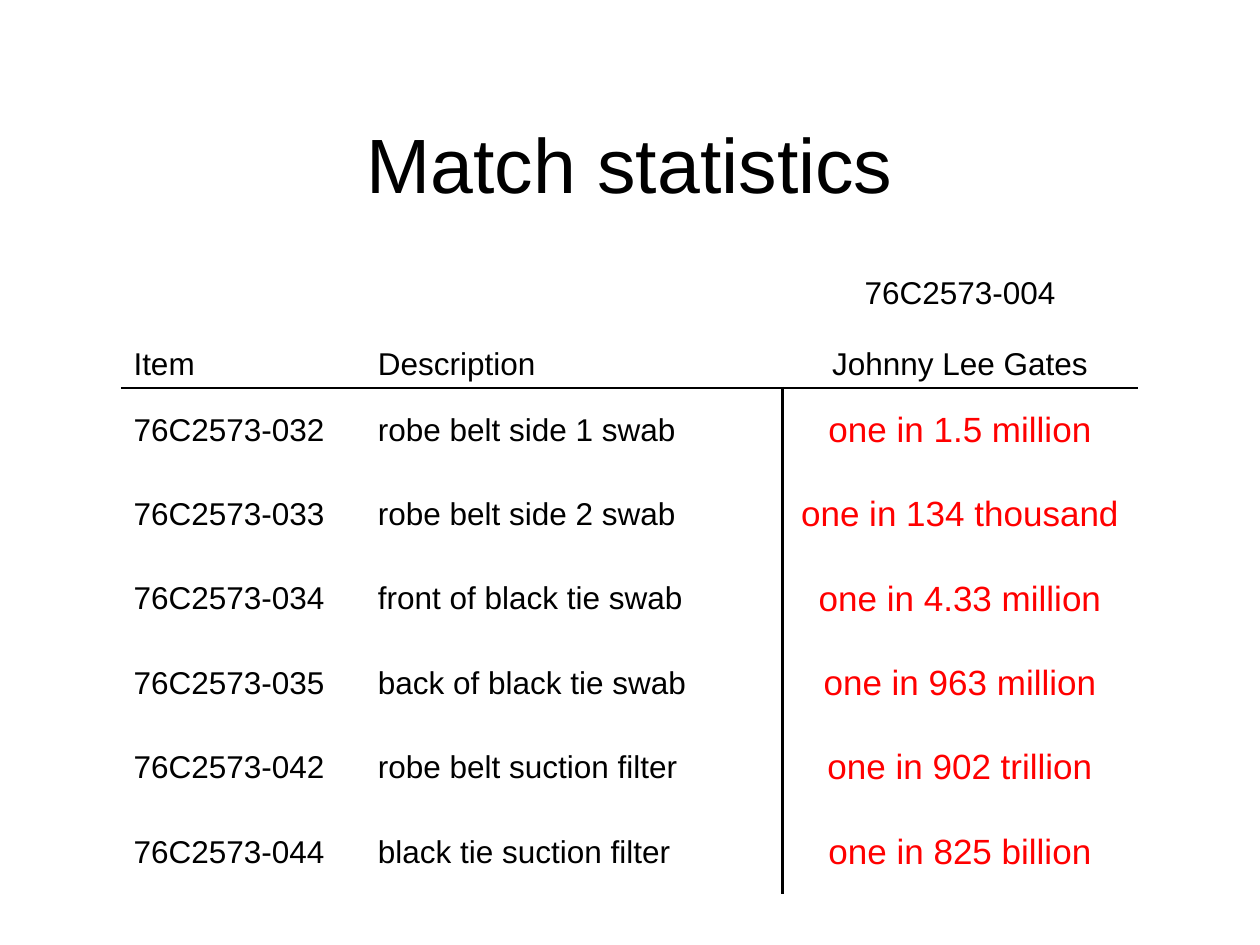
from lxml import etree
from pptx import Presentation
from pptx.dml.color import RGBColor
from pptx.enum.text import MSO_ANCHOR, PP_ALIGN
from pptx.oxml.ns import qn
from pptx.util import Inches, Pt

LEFT, CENTER = PP_ALIGN.LEFT, PP_ALIGN.CENTER
MIDDLE, BOTTOM = MSO_ANCHOR.MIDDLE, MSO_ANCHOR.BOTTOM
COLORS = {"ink": "000000", "red": "FF0000"}


def write(frame, text, size=18, color="ink", align=LEFT, gap=0):
    """Fill a text frame, one paragraph per line, with a gap between them."""
    frame.text = text
    for i, para in enumerate(frame.paragraphs):
        para.alignment = align
        para.space_before = Pt(gap if i else 0)
        para.font.name = "Arial"
        para.font.size = Pt(size)
        para.font.bold = False
        para.font.color.rgb = RGBColor.from_string(COLORS[color])


def rule(cell, edges):
    """Draw the named cell edges and clear the others."""
    props = cell._tc.get_or_add_tcPr()
    for edge in "LRTB":
        line = etree.SubElement(props, qn("a:ln" + edge), w=str(Pt(1.5)))
        if edge in edges:
            fill = etree.SubElement(line, qn("a:solidFill"))
            etree.SubElement(fill, qn("a:srgbClr"), val=COLORS["ink"])
        else:
            etree.SubElement(line, qn("a:noFill"))


deck = Presentation()
deck.slide_width, deck.slide_height = Inches(10), Inches(7.5)
slide = deck.slides.add_slide(deck.slide_layouts[5])

# Title
title = slide.shapes.title
title.left, title.top = Inches(0.05), Inches(0.67)
title.width, title.height = Inches(9.9), Inches(1.25)
title.text_frame.vertical_anchor = MIDDLE
write(title.text_frame, "Match statistics", size=44, align=CENTER)

# Table content
rows = [
    ("Item", "Description", "76C2573-004\nJohnny Lee Gates"),
    ("76C2573-032", "robe belt side 1 swab", "one in 1.5 million"),
    ("76C2573-033", "robe belt side 2 swab", "one in 134 thousand"),
    ("76C2573-034", "front of black tie swab", "one in 4.33 million"),
    ("76C2573-035", "back of black tie swab", "one in 963 million"),
    ("76C2573-042", "robe belt suction filter", "one in 902 trillion"),
    ("76C2573-044", "black tie suction filter", "one in 825 billion"),
]
widths = [1.94, 3.31, 2.82]

# Table grid
table = slide.shapes.add_table(len(rows), len(widths), Inches(0.96), Inches(2.08),
                               Inches(sum(widths)), Inches(5.02)).table
table.first_row = table.horz_banding = False
for col, width in zip(table.columns, widths):
    col.width = Inches(width)

# Cells: a line under the header and one left of the statistics
for r, row in enumerate(rows):
    table.rows[r].height = Inches(0.67 if r else 1)
    for c, text in enumerate(row):
        cell = table.cell(r, c)
        stat = r > 0 and c == 2
        edges = {0: "B", 1: "T"}.get(r, "")
        if r:
            edges += ["", "R", "L"][c]
        rule(cell, edges)
        cell.fill.background()
        cell.vertical_anchor = MIDDLE if r else BOTTOM
        write(cell.text_frame, text, size=20 if stat else 18,
              color="red" if stat else "ink",
              align=CENTER if c == 2 else LEFT, gap=20)

deck.save("out.pptx")
